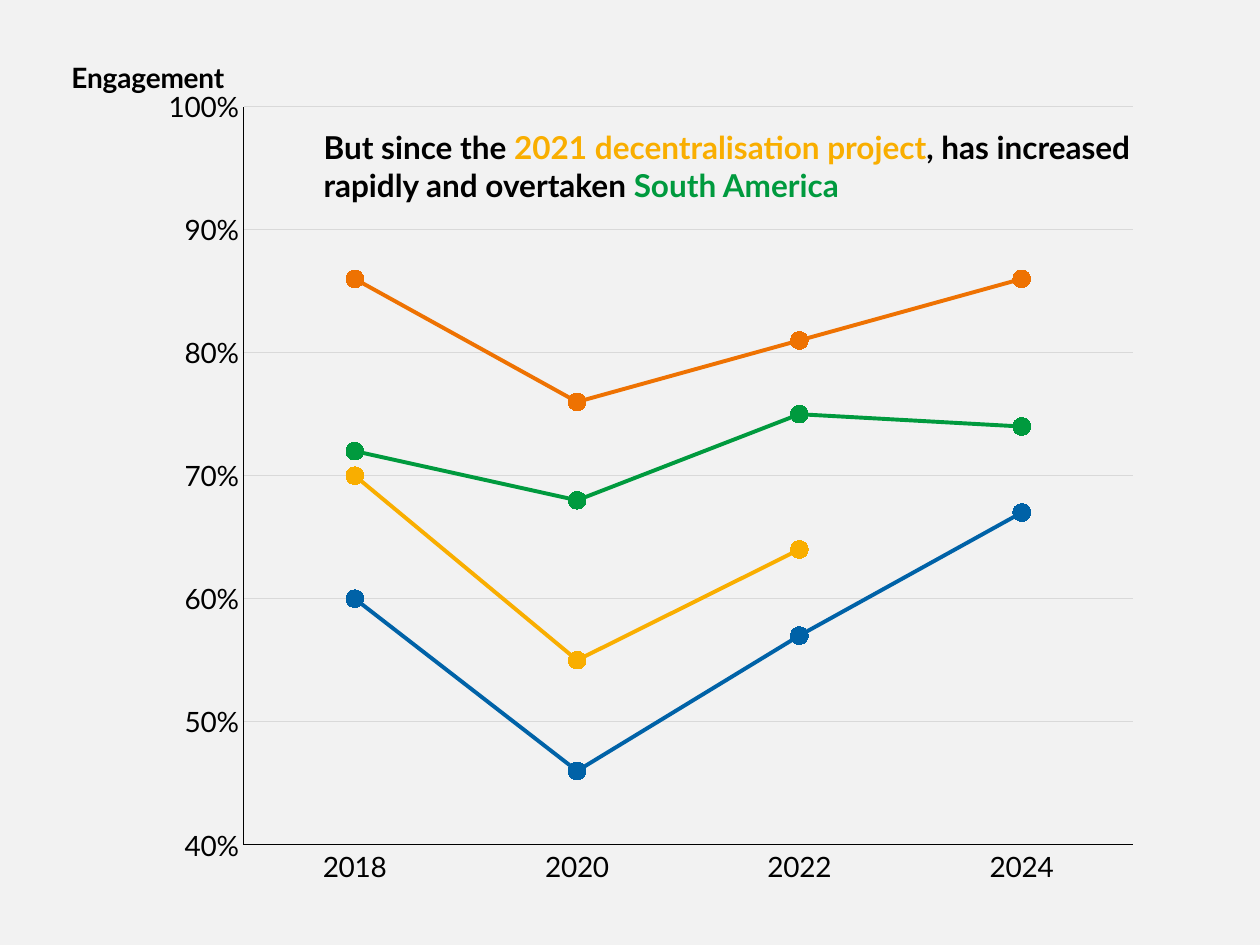
from lxml import etree
from pptx import Presentation
from pptx.chart.data import CategoryChartData
from pptx.dml.color import RGBColor
from pptx.enum.chart import XL_CHART_TYPE, XL_MARKER_STYLE, XL_TICK_MARK
from pptx.enum.text import MSO_AUTO_SIZE
from pptx.oxml.ns import qn
from pptx.util import Inches, Pt

LINE_MARKERS = XL_CHART_TYPE.LINE_MARKERS
CIRCLE = XL_MARKER_STYLE.CIRCLE
NO_TICK = XL_TICK_MARK.NONE
FIT_SHAPE = MSO_AUTO_SIZE.SHAPE_TO_FIT_TEXT

# Content
FONT = "Lato"
BLACK, ORANGE, GREEN, YELLOW, BLUE = "000000", "EE7202", "009A3E", "F9AE00", "0062A7"
BACKGROUND, GRID = "F2F2F2", "D9D9D9"
AXIS_TITLE = "Engagement"
YEARS = ["2018", "2020", "2022", "2024"]
SERIES = [
    ("Series 1", ORANGE, (0.86, 0.76, 0.81, 0.86)),
    ("Series 2", GREEN, (0.72, 0.68, 0.75, 0.74)),
    ("Series 3", YELLOW, (0.70, 0.55, 0.64, None)),
    ("Series 4", BLUE, (0.60, 0.46, 0.57, 0.67)),
]
MESSAGE = [
    ("But since the ", BLACK),
    ("2021 decentralisation project", YELLOW),
    (", has increased rapidly and overtaken ", BLACK),
    ("South America", GREEN),
]


def rgb(color):
    return RGBColor.from_string(color)


def style_font(font, size, color, bold=False):
    font.name = FONT
    font.size = Pt(size)
    font.bold = bold
    font.color.rgb = rgb(color)


def style_line(line, color, width):
    line.color.rgb = rgb(color)
    line.width = Pt(width)


def set_layout(parent, index, **values):
    """Place a chart part by fractions of the chart area."""
    for old in parent.findall(qn("c:layout")):
        parent.remove(old)
    layout = etree.Element(qn("c:layout"))
    manual = etree.SubElement(layout, qn("c:manualLayout"))
    for tag, value in values.items():
        etree.SubElement(manual, qn("c:" + tag)).set("val", str(value))
    parent.insert(index, layout)


prs = Presentation()
prs.slide_width, prs.slide_height = Inches(10), Inches(7.5)
slide = prs.slides.add_slide(prs.slide_layouts[6])
slide.background.fill.solid()
slide.background.fill.fore_color.rgb = rgb(BACKGROUND)

# Line chart
data = CategoryChartData(number_format="0%")
data.categories = YEARS
for name, color, values in SERIES:
    data.add_series(name, values)
chart = slide.shapes.add_chart(
    LINE_MARKERS, Inches(0.35), Inches(0.21), Inches(8.8), Inches(7), data
).chart
chart.has_legend = False
chart.has_title = False
style_font(chart.font, 16, BLACK)
plot = chart.plots[0]
plot.vary_by_categories = False
for series, (name, color, values) in zip(plot.series, SERIES):
    series.smooth = False
    style_line(series.format.line, color, 2.25)
    marker = series.marker
    marker.style, marker.size = CIRCLE, 10
    marker.format.fill.solid()
    marker.format.fill.fore_color.rgb = rgb(color)
    style_line(marker.format.line, color, 0.75)

# Axes
cat_axis, val_axis = chart.category_axis, chart.value_axis
for axis in (cat_axis, val_axis):
    axis.major_tick_mark = axis.minor_tick_mark = NO_TICK
    style_font(axis.tick_labels.font, 16, BLACK)
    style_line(axis.format.line, BLACK, 0.75)
cat_axis.has_major_gridlines = False
val_axis.minimum_scale, val_axis.maximum_scale = 0.4, 1
val_axis.major_unit = 0.1
val_axis.tick_labels.number_format = "0%"
val_axis.tick_labels.number_format_is_linked = False
val_axis.has_major_gridlines = True
style_line(val_axis.major_gridlines.format.line, GRID, 0.75)

# Horizontal axis title above the value axis
title = val_axis.axis_title
tf = title.text_frame
tf.text = AXIS_TITLE
style_font(tf.paragraphs[0].runs[0].font, 16, BLACK, bold=True)
title_xml = val_axis.axis_title._element
body = title_xml.find(".//" + qn("a:bodyPr"))
body.set("rot", "0")
body.set("vert", "horz")
set_layout(title_xml, 1, xMode="edge", yMode="edge", x=0.02, y=0.03)
plot_area = chart._chartSpace.find(".//" + qn("c:plotArea"))
set_layout(plot_area, 0, layoutTarget="inner", xMode="edge", yMode="edge",
           x=0.18, y=0.091, w=0.802, h=0.837)

# Message
sp = slide.shapes.add_textbox(Inches(2.47), Inches(0.97), Inches(6.68), Inches(0.71))
tf = sp.text_frame
tf.word_wrap = True
tf.auto_size = FIT_SHAPE
p = tf.paragraphs[0]
for text, color in MESSAGE:
    r = p.add_run()
    r.text = text
    style_font(r.font, 18, color, bold=True)

prs.save("out.pptx")
